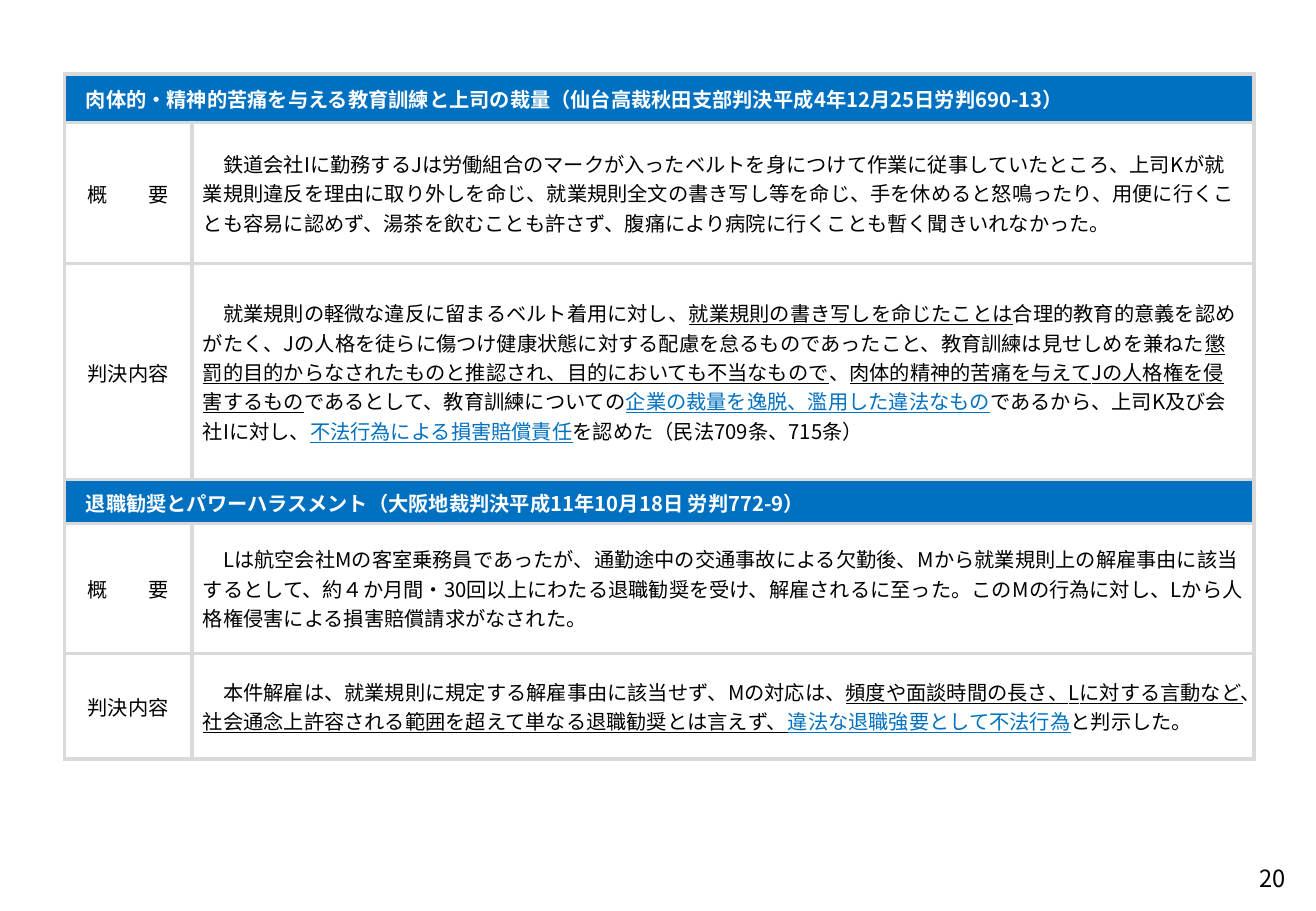
from typing import NamedTuple

from lxml.etree import SubElement
from pptx import Presentation
from pptx.dml.color import RGBColor
from pptx.enum.text import MSO_ANCHOR, PP_ALIGN
from pptx.oxml import parse_xml
from pptx.oxml.ns import nsdecls, qn
from pptx.util import Pt

PX = 9144  # EMU in one px, 100 px to the inch
FONT = "Noto Sans CJK JP"
BLACK = RGBColor(0x00, 0x00, 0x00)
WHITE = RGBColor(0xFF, 0xFF, 0xFF)
BLUE = RGBColor(0x00, 0x70, 0xC0)
GREY = RGBColor(0xD9, 0xD9, 0xD9)


class Style(NamedTuple):
    color: RGBColor = BLACK
    bold: bool = False
    under: bool = False
    size: int = 12


class Part(NamedTuple):
    text: str
    style: Style = Style()


class Case(NamedTuple):
    title: str
    facts: list[Part]
    ruling: list[Part]
    heights: tuple[int, int, int]


class Inset(NamedTuple):
    left: int
    top: int
    right: int
    bottom: int


HEAD = Style(WHITE, bold=True)
LINE = Style(under=True)
KEY = Style(BLUE, under=True)
FOLIO = Style(size=14)
TIGHT = Inset(1, 1, 1, 0)
ROOMY = Inset(9, 4, 9, 4)
COLS = (105, 874)

CASES = [
    Case(
        "　肉体的・精神的苦痛を与える教育訓練と上司の裁量（仙台高裁秋田支部判決平成4年12月25日労判690-13）",
        [Part("　鉄道会社Iに勤務するJは労働組合のマークが入ったベルトを身につけて作業に従事していたところ、"
              "上司Kが就業規則違反を理由に取り外しを命じ、就業規則全文の書き写し等を命じ、手を休めると怒鳴ったり、"
              "用便に行くことも容易に認めず、湯茶を飲むことも許さず、腹痛により病院に行くことも暫く聞きいれなかった。")],
        [Part("　就業規則の軽微な違反に留まるベルト着用に対し、"),
         Part("就業規則の書き写しを命じたことは", LINE),
         Part("合理的教育的意義を認めがたく、Jの人格を徒らに傷つけ健康状態に対する配慮を怠るものであったこと、"
              "教育訓練は見せしめを兼ねた"),
         Part("懲罰的目的からなされたものと推認され、目的においても不当なもので", LINE),
         Part("、"),
         Part("肉体的精神的苦痛を与えてJの人格権を侵害するもの", LINE),
         Part("であるとして、教育訓練についての"),
         Part("企業の裁量を逸脱、濫用した違法なもの", KEY),
         Part("であるから、上司K及び会社Iに対し、"),
         Part("不法行為による損害賠償責任", KEY),
         Part("を認めた（民法709条、715条）")],
        (40, 116, 178),
    ),
    Case(
        "　退職勧奨とパワーハラスメント（大阪地裁判決平成11年10月18日 労判772-9）",
        [Part("　Lは航空会社Mの客室乗務員であったが、通勤途中の交通事故による欠勤後、"
              "Mから就業規則上の解雇事由に該当するとして、約４か月間・30回以上にわたる退職勧奨を受け、"
              "解雇されるに至った。このMの行為に対し、Lから人格権侵害による損害賠償請求がなされた。")],
        [Part("　本件解雇は、就業規則に規定する解雇事由に該当せず、Mの対応は、"),
         Part("頻度や面談時間の長さ、Lに対する言動など、社会通念上許容される範囲を超えて"
              "単なる退職勧奨とは言えず、", LINE),
         Part("違法な退職強要として不法行為", KEY),
         Part("と判示した。")],
        (36, 107, 87),
    ),
]


def write(frame, parts: list[Part], align: PP_ALIGN) -> None:
    para = frame.paragraphs[0]
    para.alignment = align
    for part in parts:
        run = para.add_run()
        run.text = part.text
        font = run.font
        font.size = Pt(part.style.size)
        font.bold = part.style.bold
        font.underline = part.style.under
        font.color.rgb = part.style.color
        font.name = FONT
        SubElement(font._element, qn("a:ea"), typeface=FONT)


def edge(cell) -> None:
    props = cell._tc.get_or_add_tcPr()
    for spot, side in enumerate("LRTB"):
        props.insert(spot, parse_xml(
            f'<a:ln{side} {nsdecls("a")} w="{Pt(2.25)}"><a:solidFill>'
            f'<a:srgbClr val="{GREY}"/></a:solidFill></a:ln{side}>'))


def fill(cell, parts: list[Part], inset: Inset, align: PP_ALIGN = PP_ALIGN.LEFT) -> None:
    cell.vertical_anchor = MSO_ANCHOR.MIDDLE
    cell.margin_left, cell.margin_top, cell.margin_right, cell.margin_bottom = (
        gap * PX for gap in inset)
    write(cell.text_frame, parts, align)


def draw_cases(slide) -> None:
    heights = [height for case in CASES for height in case.heights]
    grid = slide.shapes.add_table(
        len(heights), len(COLS), 53 * PX, 61 * PX, sum(COLS) * PX, sum(heights) * PX).table
    grid.first_row = grid.horz_banding = False
    for col, width in zip(grid.columns, COLS):
        col.width = width * PX
    for row, height in zip(grid.rows, heights):
        row.height = height * PX
    for cell in grid.iter_cells():
        cell.fill.background()
        edge(cell)

    for index, case in enumerate(CASES):
        top = index * len(case.heights)
        # Case heading
        head = grid.cell(top, 0)
        head.merge(grid.cell(top, 1))
        head.fill.solid()
        head.fill.fore_color.rgb = BLUE
        fill(head, [Part(case.title, HEAD)], TIGHT)
        # Facts and ruling
        pairs = [("概　　要", case.facts), ("判決内容", case.ruling)]
        for row, (label, parts) in enumerate(pairs, top + 1):
            fill(grid.cell(row, 0), [Part(label)], TIGHT, PP_ALIGN.CENTER)
            fill(grid.cell(row, 1), parts, ROOMY)


def draw_folio(slide) -> None:
    frame = slide.shapes.add_textbox(951 * PX, 706 * PX, 117 * PX, 34 * PX).text_frame
    frame.word_wrap = True
    frame.vertical_anchor = MSO_ANCHOR.MIDDLE
    write(frame, [Part("20", FOLIO)], PP_ALIGN.RIGHT)


def main() -> None:
    deck = Presentation()
    deck.slide_width, deck.slide_height = 1083 * PX, 750 * PX
    slide = deck.slides.add_slide(deck.slide_layouts[6])
    # Page number
    draw_folio(slide)
    # Table of court cases
    draw_cases(slide)
    deck.save("out.pptx")


if __name__ == "__main__":
    main()
